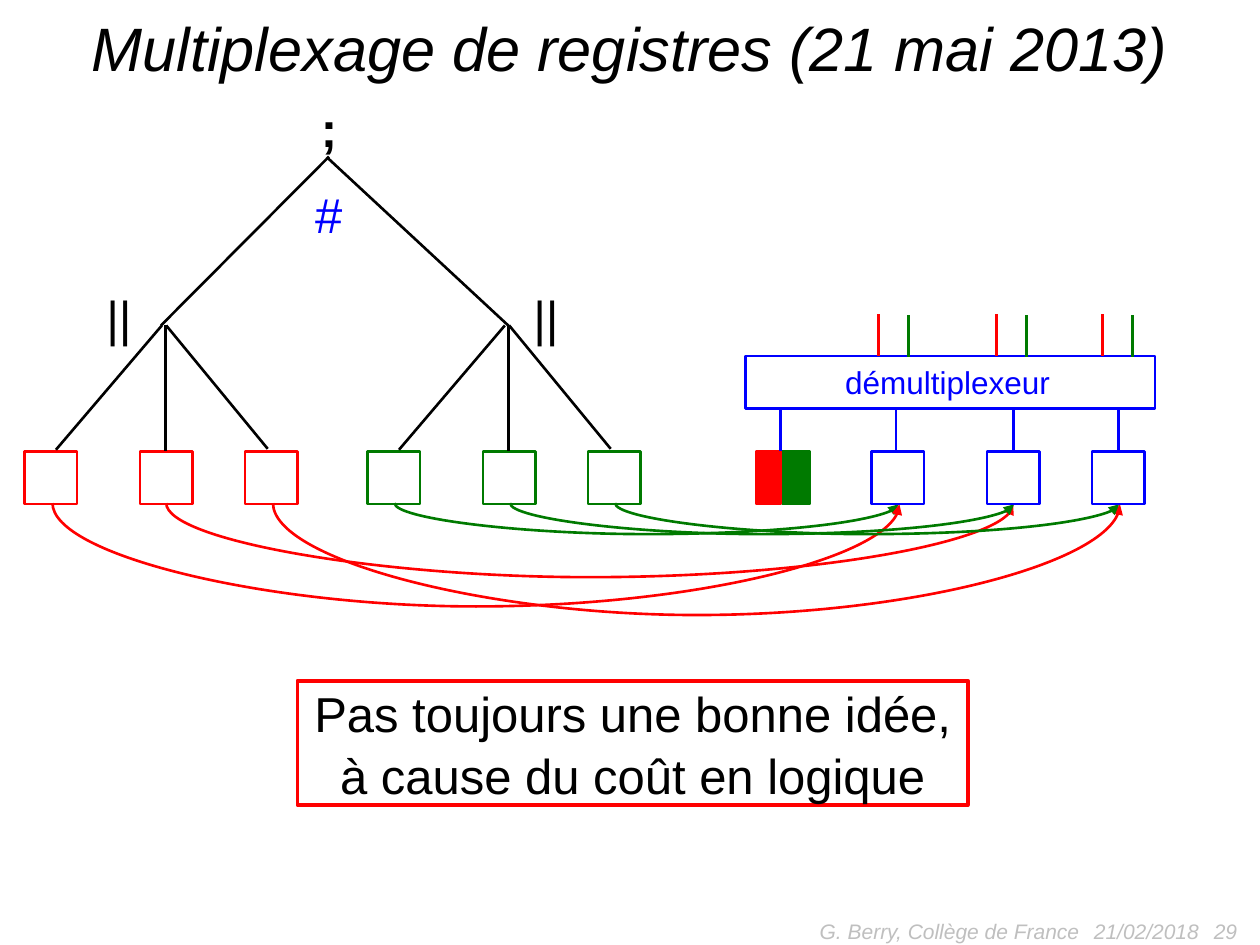
from dataclasses import dataclass
from typing import Optional

from lxml.etree import SubElement
from pptx import Presentation
from pptx.dml.color import RGBColor
from pptx.enum.shapes import MSO_CONNECTOR as Conn, MSO_SHAPE as Shape
from pptx.enum.text import MSO_ANCHOR as Anchor, MSO_AUTO_SIZE as AutoSize, PP_ALIGN as Align
from pptx.oxml.ns import qn
from pptx.util import Pt

BLACK = RGBColor(0x00, 0x00, 0x00)
WHITE = RGBColor(0xFF, 0xFF, 0xFF)
RED = RGBColor(0xFF, 0x00, 0x00)
GREEN = RGBColor(0x00, 0x7A, 0x00)
BLUE = RGBColor(0x00, 0x00, 0xFF)
GREY = RGBColor(0xBF, 0xBF, 0xBF)

BOX = 30
BOX_TOP = 258
BOX_OFFSETS = (0, 66, 126)
NODE_Y = 186
ARC_RISE = 0.72


@dataclass
class Label:
    text: str
    left: float
    top: float
    width: float
    height: float
    size: float = 28
    color: RGBColor = BLACK
    align: Align = Align.CENTER
    anchor: Anchor = Anchor.MIDDLE
    bold: bool = False
    italic: bool = False


@dataclass
class Tree:
    left: float
    node_x: float
    color: RGBColor


@dataclass
class Arc:
    start: float
    end: float
    depth: float
    color: RGBColor


LABELS = [
    Label("21/02/2018", 618, 517, 168, 29, 12, GREY, Align.LEFT, italic=True),
    Label(" 29", 546, 517, 168, 29, 12, GREY, Align.RIGHT, italic=True),
    Label("G. Berry, Collège de France", 396, 517, 228, 29, 12, GREY, Align.RIGHT, italic=True),
    Label("||", 53, 160, 30, 41),
    Label("||", 297, 160, 30, 41),
    Label(";", 176, 52, 24, 41, bold=True),
    Label("#", 173, 100, 30, 41, color=BLUE, align=Align.LEFT, anchor=Anchor.TOP),
]
TREES = [Tree(14, 94.5, RED), Tree(210, 290.5, GREEN)]
ARCS = [
    Arc(225.5, 513.5, 18, GREEN),
    Arc(30, 514, 60, RED),
    Arc(95, 579, 43, RED),
    Arc(291.5, 579.5, 18, GREEN),
    Arc(156, 640, 65, RED),
    Arc(351.5, 639.5, 18, GREEN),
]


def set_text(shape, text: str, size: float, color: RGBColor, align: Align,
             bold: bool = False, italic: bool = False) -> None:
    tf = shape.text_frame
    tf.text = text
    for p in tf.paragraphs:
        p.alignment = align
        p.line_spacing = 1.05
        for r in p.runs:
            r.font.name = "Arial"
            r.font.size = Pt(size)
            r.font.bold = bold
            r.font.italic = italic
            r.font.color.rgb = color


def add_label(s, label: Label) -> None:
    tb = s.shapes.add_textbox(Pt(label.left), Pt(label.top), Pt(label.width), Pt(label.height))
    tb.text_frame.word_wrap = False
    tb.text_frame.vertical_anchor = label.anchor
    set_text(tb, label.text, label.size, label.color, label.align, label.bold, label.italic)


def add_rect(s, left: float, top: float, width: float, height: float, color: RGBColor,
             fill: Optional[RGBColor] = None, weight: float = 1.5):
    sp = s.shapes.add_shape(Shape.RECTANGLE, Pt(left), Pt(top), Pt(width), Pt(height))
    sp.shadow.inherit = False
    sp.line.color.rgb = color
    sp.line.width = Pt(weight)
    if fill is None:
        sp.fill.background()
    else:
        sp.fill.solid()
        sp.fill.fore_color.rgb = fill
    return sp


def add_line(s, x1: float, y1: float, x2: float, y2: float, color: RGBColor, kind=Conn.STRAIGHT):
    line = s.shapes.add_connector(kind, Pt(x1), Pt(y1), Pt(x2), Pt(y2))
    line.line.color.rgb = color
    line.line.width = Pt(1.5)
    SubElement(line._element.spPr, qn("a:effectLst"))
    return line


def add_arc(s, arc: Arc) -> None:
    span = arc.end - arc.start
    left = (arc.start + arc.end - ARC_RISE) / 2
    top = BOX_TOP + BOX - 0.5 + (ARC_RISE - span) / 2
    line = add_line(s, left, top, left + ARC_RISE, top + span, arc.color, Conn.CURVE)
    spPr = line._element.spPr
    xfrm = spPr.find(qn("a:xfrm"))
    xfrm.set("rot", str(270 * 60000))
    xfrm.set("flipH", "1")
    geom = spPr.find(qn("a:prstGeom"))
    guides = geom.find(qn("a:avLst"))
    if guides is None:
        guides = SubElement(geom, qn("a:avLst"))
    fmla = f"val {round(arc.depth / ARC_RISE * 100000)}"
    SubElement(guides, qn("a:gd"), name="adj1", fmla=fmla)
    SubElement(spPr.find(qn("a:ln")), qn("a:tailEnd"), type="triangle")


def add_tree(s, tree: Tree) -> None:
    for offset in BOX_OFFSETS:
        add_rect(s, tree.left + offset, BOX_TOP, BOX, BOX, tree.color)
    x = tree.node_x
    add_line(s, x - 2, NODE_Y, tree.left + 18, BOX_TOP - 1, BLACK)
    add_line(s, x, NODE_Y, x, BOX_TOP, BLACK)
    add_line(s, x + 0.5, NODE_Y, x + 58.5, BOX_TOP - 1.5, BLACK)


def add_demultiplexer(s) -> None:
    for left in (498, 564, 624):
        add_rect(s, left, BOX_TOP, BOX, BOX, BLUE)
    add_rect(s, 447, BOX_TOP, 16, BOX, GREEN, GREEN)
    add_rect(s, 432, BOX_TOP, 14, BOX, RED, RED)
    for x in (446, 512, 579, 639):
        add_line(s, x, BOX_TOP, x, 233, BLUE)
    add_rect(s, 426, 203.5, 234, BOX, BLUE, WHITE)
    add_label(s, Label("démultiplexeur", 475, 203, 133, 29, 18, BLUE))
    for x in (502, 569.5, 630):
        add_line(s, x, 203.5, x, 179.5, RED)
        add_line(s, x + 17, 204, x + 17, 180, GREEN)


def main() -> None:
    prs = Presentation()
    prs.slide_width, prs.slide_height = Pt(720), Pt(540)
    s = prs.slides.add_slide(prs.slide_layouts[5])

    title = s.shapes.title
    title.left, title.top, title.width, title.height = Pt(9), Pt(1), Pt(702), Pt(50)
    title.text_frame.auto_size = AutoSize.NONE
    title.text_frame.vertical_anchor = Anchor.MIDDLE
    set_text(title, "Multiplexage de registres (21 mai 2013)", 35, BLACK, Align.CENTER, italic=True)

    for tree in TREES:
        add_tree(s, tree)
    add_line(s, 92, NODE_Y, 188, 89.5, BLACK)
    add_line(s, 291.5, 187, 187.5, 90.5, BLACK)
    for arc in ARCS:
        add_arc(s, arc)
    add_demultiplexer(s)
    for label in LABELS:
        add_label(s, label)

    note = add_rect(s, 170, 389, 383, 71, RED, weight=2.25)
    tf = note.text_frame
    tf.word_wrap = False
    tf.margin_top = 0
    tf.vertical_anchor = Anchor.TOP
    set_text(note, "Pas toujours une bonne idée,\nà cause du coût en logique", 28, BLACK, Align.CENTER)

    prs.save("out.pptx")


if __name__ == "__main__":
    main()
